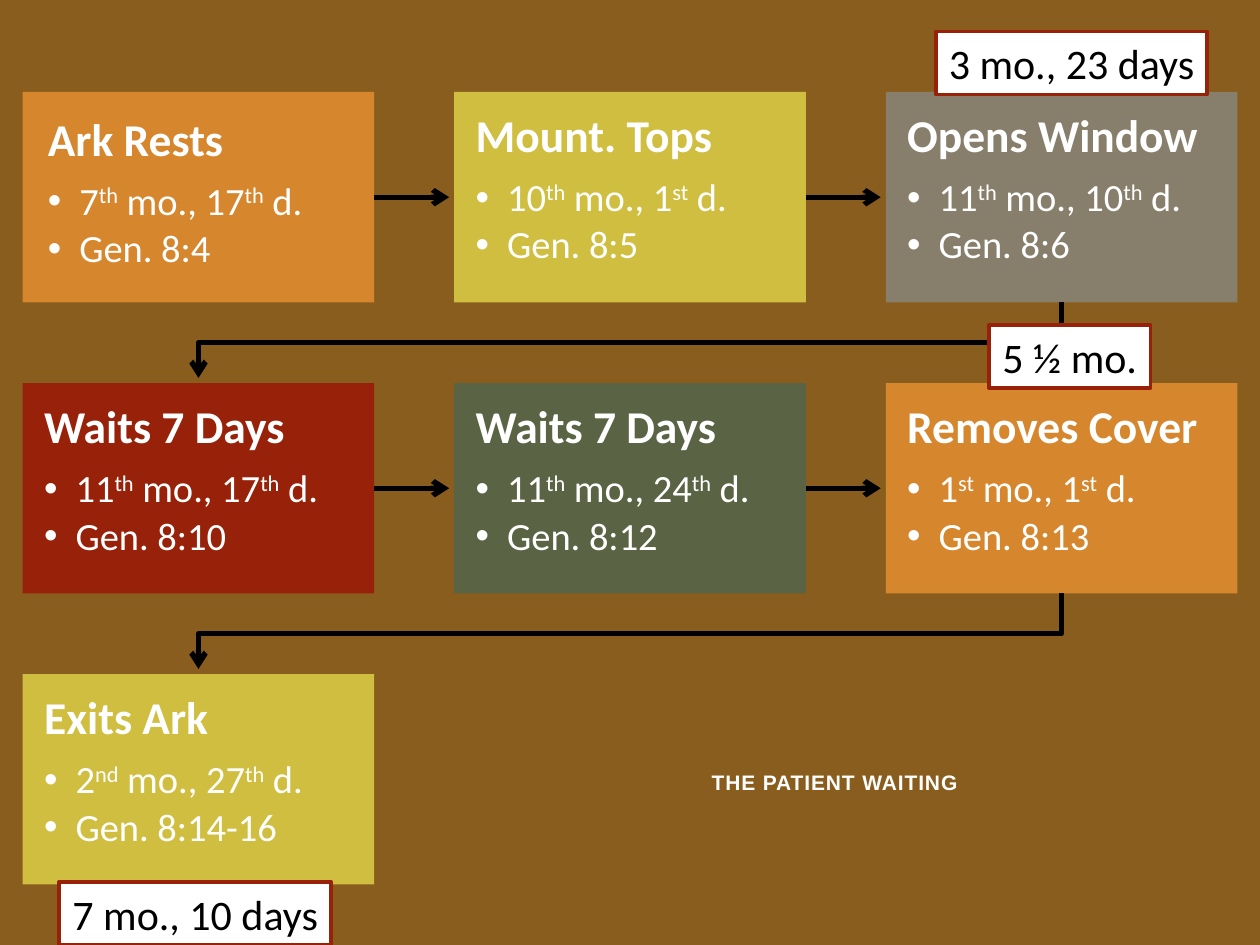
from dataclasses import dataclass

from lxml import etree
from pptx import Presentation
from pptx.dml.color import RGBColor
from pptx.enum.shapes import MSO_CONNECTOR, MSO_SHAPE
from pptx.enum.text import MSO_ANCHOR, MSO_AUTO_SIZE, PP_ALIGN
from pptx.oxml import parse_xml
from pptx.oxml.ns import nsdecls, qn
from pptx.util import Inches, Pt

RECT, STRAIGHT = MSO_SHAPE.RECTANGLE, MSO_CONNECTOR.STRAIGHT
TOP, MIDDLE = MSO_ANCHOR.TOP, MSO_ANCHOR.MIDDLE
LEFT, CENTER = PP_ALIGN.LEFT, PP_ALIGN.CENTER
NO_FIT, GROW = MSO_AUTO_SIZE.NONE, MSO_AUTO_SIZE.SHAPE_TO_FIT_TEXT


@dataclass(frozen=True)
class Theme:
    background: str = "895D1D"
    orange: str = "D6862D"
    yellow: str = "D0BE40"
    gray: str = "877F6C"
    red: str = "972109"
    green: str = "5A6343"
    white: str = "FFFFFF"
    black: str = "000000"
    title: str = "FEFEFE"
    title_edge: str = "9FA984"
    title_size: int = 12
    heading_size: int = 26
    item_size: int = 22
    label_size: int = 24
    title_font: str = "Arial"
    font: str = "Calibri"


T = Theme()


def add_run(p, text, color, **formats):
    r = p.add_run()
    r.text = text
    for name, value in formats.items():
        setattr(r.font, name, value)
    r.font.color.rgb = RGBColor.from_string(color)
    return r


def style_arrow(shape):
    shape.line.color.rgb = RGBColor.from_string(T.black)
    shape.line.width = Pt(3)
    etree.SubElement(shape.line._get_or_add_ln(), qn("a:tailEnd"), type="arrow")


prs = Presentation()
prs.slide_width, prs.slide_height = Inches(10), Inches(7.5)
s = prs.slides.add_slide(prs.slide_layouts[5])
s.background.fill.solid()
s.background.fill.fore_color.rgb = RGBColor.from_string(T.background)

# Title
title = s.shapes.title
title.left, title.top = Inches(3.75), Inches(5.5)
title.width, title.height = Inches(5.75), Inches(1.42)
tf = title.text_frame
tf.auto_size, tf.vertical_anchor = NO_FIT, MIDDLE
p = tf.paragraphs[0]
p.alignment = CENTER
r = add_run(p, "THE PATIENT WAITING", T.title, size=Pt(T.title_size), name=T.title_font, bold=True)
rPr = r._r.get_or_add_rPr()
rPr.set("spc", "50")
rPr.insert(0, parse_xml(
    f'<a:ln {nsdecls("a")} w="12700"><a:solidFill><a:srgbClr val="{T.title_edge}"/></a:solidFill></a:ln>'))
rPr.find(qn("a:solidFill")).addnext(parse_xml(
    f'<a:effectLst {nsdecls("a")}><a:outerShdw blurRad="38100" dist="12700" dir="2700000">'
    f'<a:srgbClr val="{T.title_edge}"/></a:outerShdw></a:effectLst>'))

# Event boxes on a three-column grid; ^ marks the start and end of a superscript
EVENTS = [
    ("Ark Rests", "7^th^ mo., 17^th^ d.", "Gen. 8:4", T.orange),
    ("Mount. Tops", "10^th^ mo., 1^st^ d.", "Gen. 8:5", T.yellow),
    ("Opens Window", "11^th^ mo., 10^th^ d.", "Gen. 8:6", T.gray),
    ("Waits 7 Days", "11^th^ mo., 17^th^ d.", "Gen. 8:10", T.red),
    ("Waits 7 Days", "11^th^ mo., 24^th^ d.", "Gen. 8:12", T.green),
    ("Removes Cover", "1^st^ mo., 1^st^ d.", "Gen. 8:13", T.orange),
    ("Exits Ark", "2^nd^ mo., 27^th^ d.", "Gen. 8:14-16", T.yellow),
]
COLS = 3
GRID_X, GRID_Y, STEP_X, STEP_Y = Inches(0.18), Inches(0.73), Inches(3.425), Inches(2.31)
BOX_W, BOX_H = Inches(2.79), Inches(1.67)
boxes = []
for i, (heading, date, verse, color) in enumerate(EVENTS):
    row, col = divmod(i, COLS)
    box = s.shapes.add_shape(RECT, GRID_X + col * STEP_X, GRID_Y + row * STEP_Y, BOX_W, BOX_H)
    box.shadow.inherit = False
    box.fill.solid()
    box.fill.fore_color.rgb = RGBColor.from_string(color)
    box.line.fill.background()
    boxes.append(box)
    tf = box.text_frame
    inset = Inches(0.2 if i == 0 else 0.17)
    frame = dict(word_wrap=True, vertical_anchor=TOP, margin_left=inset, margin_top=inset,
                 margin_right=inset, margin_bottom=inset)
    for name, value in frame.items():
        setattr(tf, name, value)

    p = tf.paragraphs[0]
    p.alignment, p.line_spacing, p.space_after = LEFT, 0.9, Pt(9.1)
    add_run(p, heading, T.white, size=Pt(T.heading_size), name=T.font, bold=True)
    for item in (date, verse):
        p = tf.add_paragraph()
        pPr = p._p.get_or_add_pPr()
        pPr.set("marL", str(Inches(0.25)))
        pPr.set("indent", str(Inches(-0.25)))
        etree.SubElement(pPr, qn("a:buFont"), typeface=T.title_font)
        etree.SubElement(pPr, qn("a:buChar"), char="•")
        p.level, p.alignment, p.line_spacing, p.space_after = 1, LEFT, 0.9, Pt(3.3)
        for n, part in enumerate(item.split("^")):
            r = add_run(p, part, T.white, size=Pt(T.item_size), name=T.font, bold=False)
            if n % 2:
                r._r.get_or_add_rPr().set("baseline", "30000")

# Arrows: straight within a row, stepped down to the next row
GAP = Inches(0.04)
for i, (box, following) in enumerate(zip(boxes, boxes[1:])):
    if (i + 1) % COLS:
        y = box.top + BOX_H // 2
        arrow = s.shapes.add_connector(STRAIGHT, box.left + BOX_W, y, following.left - GAP, y)
        arrow.begin_connect(box, 3)
        etree.SubElement(arrow._element.spPr, qn("a:effectLst"))
        style_arrow(arrow)
    else:
        start_x, end_x = box.left + BOX_W // 2, following.left + BOX_W // 2
        start_y, end_y = box.top + BOX_H, following.top - GAP
        turn_y = (box.top + BOX_H + following.top) // 2
        outline = s.shapes.build_freeform(start_x, start_y)
        outline.add_line_segments([(start_x, turn_y), (end_x, turn_y), (end_x, end_y)], close=False)
        arrow = outline.convert_to_shape()
        arrow.fill.background()
        arrow.shadow.inherit = False
        style_arrow(arrow)

# Elapsed-time labels
LABELS = [
    ("3 mo., 23 days", 7.43, 0.25, 2.15),
    ("5 ½ mo.", 7.85, 2.58, 1.28),
    ("7 mo., 10 days", 0.47, 7, 2.16),
]
for text, left, top, width in LABELS:
    label = s.shapes.add_shape(RECT, Inches(left), Inches(top), Inches(width), Inches(0.5))
    label.shadow.inherit = False
    label.fill.solid()
    label.fill.fore_color.rgb = RGBColor.from_string(T.white)
    label.line.color.rgb = RGBColor.from_string(T.red)
    label.line.width = Pt(2.08)
    tf = label.text_frame
    tf.word_wrap, tf.auto_size, tf.vertical_anchor = False, GROW, TOP
    p = tf.paragraphs[0]
    p.alignment = CENTER
    add_run(p, text, T.black, size=Pt(T.label_size), name=T.font)

prs.save("out.pptx")
